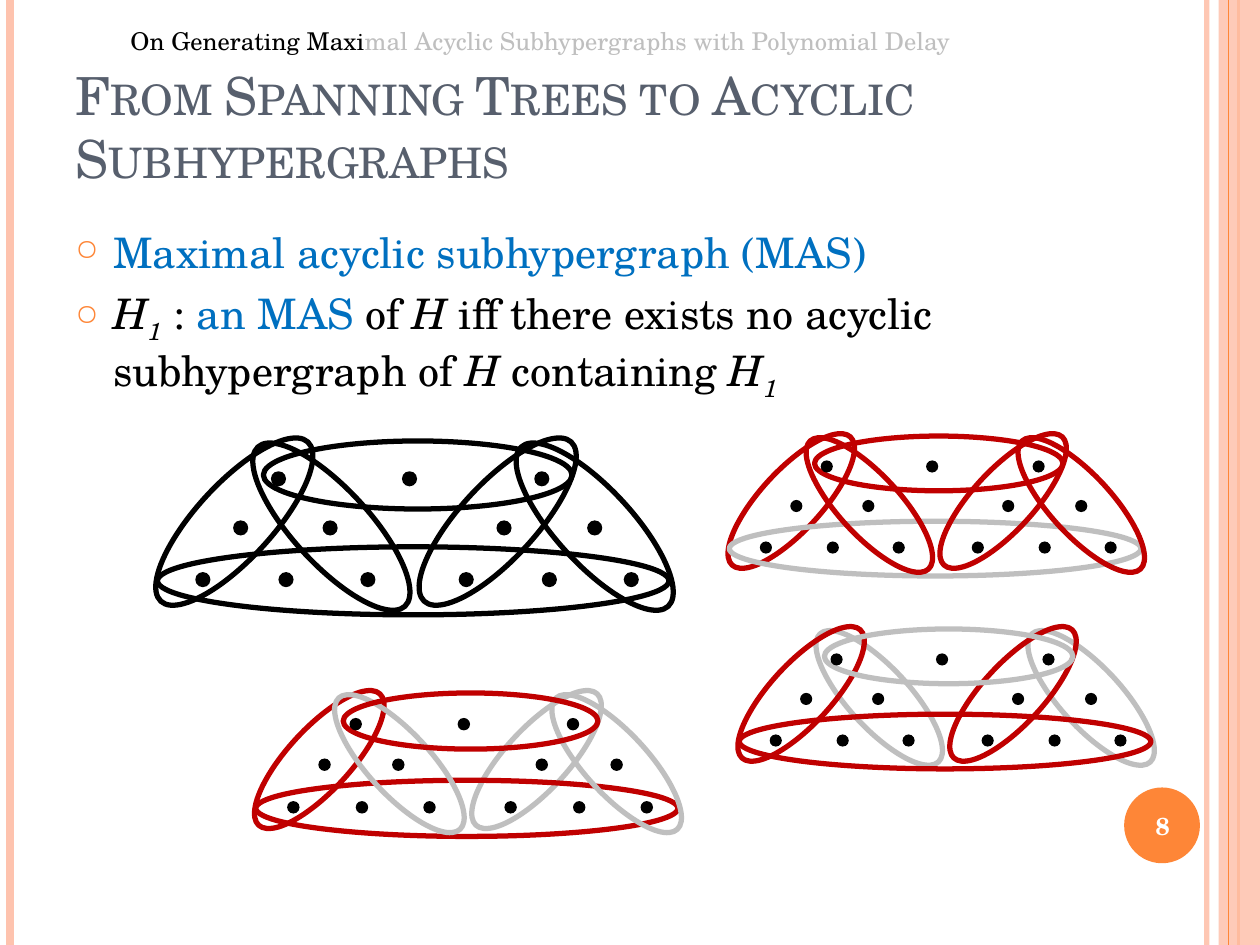
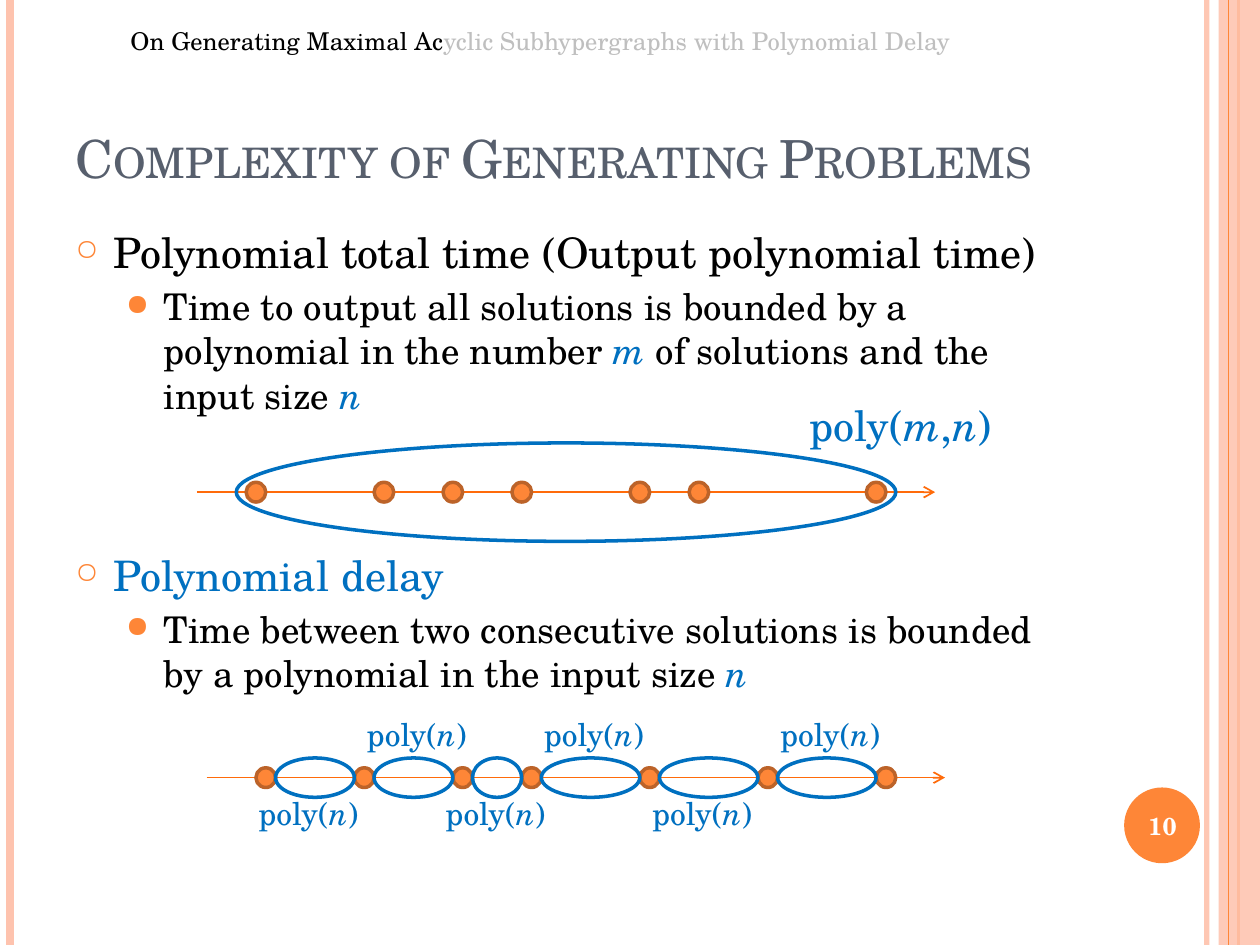
from itertools import accumulate, pairwise
from lxml import etree
from pptx import Presentation
from pptx.dml.color import RGBColor
from pptx.enum.shapes import MSO_CONNECTOR, MSO_SHAPE
from pptx.enum.text import MSO_ANCHOR, PP_ALIGN
from pptx.oxml.ns import qn
from pptx.util import Inches, Pt

OVAL, RECT = MSO_SHAPE.OVAL, MSO_SHAPE.RECTANGLE
LINE = MSO_CONNECTOR.STRAIGHT
TOP, MID, LOW = MSO_ANCHOR.TOP, MSO_ANCHOR.MIDDLE, MSO_ANCHOR.BOTTOM
MIDDLE = PP_ALIGN.CENTER
FONT = "TeX Gyre Schola"
HEX = {
    "black": "000000", "white": "FFFFFF", "grey": "BFBFBF", "slate": "575F6D",
    "blue": "0070C0", "red": "C00000", "peach": "FEC3AE", "orange": "FE8637",
    "rust": "BC6329", "arrow": "FF6B0A",
}
RGB = {name: RGBColor.from_string(code) for name, code in HEX.items()}

deck = Presentation()
deck.slide_width, deck.slide_height = Inches(10), Inches(7.5)
CELL = deck.slide_width / 128  # grid of 128 columns by 96 rows
COLS, ROWS = 128, 96


def draw(slide, kind, box, fill=None, line=None, width=0, alpha=100, turn=0):
    """Draw a shape or line in a box of grid cells: left, top, width, height."""
    x, y, w, h = [round(n * CELL) for n in box]
    if kind is LINE:
        item = slide.shapes.add_connector(kind, x, y, x + w, y + h)
        etree.SubElement(item._element.spPr, qn("a:effectLst"))
    else:
        item = slide.shapes.add_shape(kind, x, y, w, h)
        item.shadow.inherit = False
        item.rotation = turn
        if fill:
            item.fill.solid()
            item.fill.fore_color.rgb = RGB[fill]
        else:
            item.fill.background()
    if line:
        item.line.color.rgb = RGB[line]
        item.line.width = Pt(width)
    else:
        item.line.fill.background()
    if alpha < 100:
        tone = next(item._element.spPr.iter(qn("a:srgbClr")))
        etree.SubElement(tone, qn("a:alpha"), val=str(alpha * 1000))
    return item


def write(slide, box, paras, size, hue="black", anchor=TOP, wrap=True):
    """Add text; flags of a run: i italic, s subscript, c small caps, or a hue."""
    area = slide.shapes.add_textbox(*[round(n * CELL) for n in box])
    frame = area.text_frame
    frame.word_wrap, frame.vertical_anchor = wrap, anchor
    for k, runs in enumerate(paras):
        p = frame.add_paragraph() if k else frame.paragraphs[0]
        p.font.name, p.font.size = FONT, Pt(size)
        for words, *flags in runs:
            run = p.add_run()
            run.text = words
            tint = next((f for f in flags if f in RGB), hue)
            run.font.color.rgb = RGB[tint]
            if "i" in flags:
                run.font.italic = True
            if "s" in flags:
                run._r.get_or_add_rPr().set("baseline", "-25000")
            if "c" in flags:
                run._r.get_or_add_rPr().set("cap", "small")
    return frame


# Content: title, page, letters of the running head read so far, body
HEAD = "On Generating Maximal Acyclic Subhypergraphs with Polynomial Delay"
PAGES = [
    ("From Spanning Trees to Acyclic Subhypergraphs", 8, 18, [
        (0, 6, [("Maximal acyclic subhypergraph (MAS)", "blue")]),
        (0, 6, [("H", "i"), ("1", "i", "s"), (" : ",), ("an MAS ", "blue"),
                ("of ",), ("H ", "i"),
                ("iff there exists no acyclic subhypergraph of ",), ("H", "i"),
                (" containing ",), ("H", "i"), ("1", "i", "s")]),
    ]),
    ("Complexity of Generating Problems", 10, 24, [
        (0, 6, [("Polynomial total time (Output polynomial time)",)]),
        (1, 4, [("Time to output all solutions is bounded by a polynomial "
                 "in the number ",), ("m", "i", "blue"),
                (" of solutions and the input size ",), ("n", "i", "blue")]),
        (0, 76, [("Polynomial delay", "blue")]),
        (1, 4, [("Time between two consecutive solutions is bounded by a "
                 "polynomial in the input size ",), ("n", "i", "blue")]),
    ]),
]
# Text size, left margin, bullet, bullet size for each level
LEVELS = [(24, 0.3, "○", 70), (21, 0.7, "●", 80)]

# Shared frame, title and body
for title, page, done, body in PAGES:
    slide = deck.slides.add_slide(deck.slide_layouts[6])
    for x, tint, width, alpha in [(122.6, "peach", 3, 93), (1.05, "peach", 4.5, 100),
                                  (125.8, "orange", 1.5, 100)]:
        draw(slide, LINE, (x, 0, 0, ROWS), line=tint, width=width, alpha=alpha)
    draw(slide, RECT, (123.8, 0, COLS - 123.8, ROWS), "peach", alpha=87)
    draw(slide, LINE, (124.8, 0, 0, ROWS), line="orange", width=0.75)
    draw(slide, OVAL, (114.2, 80, 7.7, 7.7), "orange")
    badge = write(slide, (113.8, 80.2, 8.6, 7.3), [[(str(page),)]], 14, "white", MID)
    badge.paragraphs[0].alignment = MIDDLE
    badge.paragraphs[0].font.bold = True
    write(slide, (12, 2, 100, 4.4), [[(HEAD[:done],), (HEAD[done:], "grey")]], 14)
    write(slide, (6.4, 3.84, 104.6, 16), [[(title, "c")]], 30, "slate", LOW)

    text = write(slide, (6.4, 22.4, 104.6, 68.2), [runs for _, _, runs in body], 24)
    for p, (level, gap, _) in zip(text.paragraphs, body):
        size, left, mark, share = LEVELS[level]
        p.font.size, p.space_before = Pt(size), Pt(gap)
        props = p._p.get_or_add_pPr()
        props.set("marL", str(Inches(left)))
        props.set("indent", str(Inches(-0.3)))
        tone = etree.Element(qn("a:buClr"))
        etree.SubElement(tone, qn("a:srgbClr"), val=HEX["orange"])
        scale = etree.Element(qn("a:buSzPct"), val=str(share * 1000))
        sign = etree.Element(qn("a:buChar"), char=mark)
        for part in (tone, scale, sign):
            props.find(qn("a:defRPr")).addprevious(part)

trees, times = deck.slides

# Hypergraphs: edges a, c, d, e are the legs, t the top, b the base
EDGES = {
    "a": (-0.25, 0.34, 1.72, 0.6, 312.7), "b": (0, 0.84, 4.06, 0.54, 0),
    "c": (0.52, 0.38, 1.72, 0.6, 47.3), "d": (1.84, 0.34, 1.72, 0.6, 312.7),
    "e": (2.61, 0.38, 1.72, 0.6, 47.3), "t": (0.84, 0, 2.45, 0.54, 0),
}
NODES = {
    0.24: (0.9, 1.94, 2.99),
    0.63: (0.6, 1.31, 2.69, 3.41),
    1.04: (0.3, 0.96, 1.61, 2.39, 3.05, 3.7),
}
# Left, top, scale, drawing order, chosen edges, their hue
GRAPHS = [
    (74.1, 44.3, 10.3, "abcdet", "acdet", "red"),
    (16, 44.8, 12.8, "abcdet", "abcdet", "black"),
    (75.1, 63.9, 10.3, "ceabdt", "abd", "red"),
    (26, 70.4, 10.56, "adbcet", "abt", "red"),
]
for left, top, zoom, order, chosen, hue in GRAPHS:
    for key in order:
        x, y, w, h, turn = EDGES[key]
        draw(trees, OVAL, (left + x * zoom, top + y * zoom, w * zoom, h * zoom),
             line=hue if key in chosen else "grey", width=3, turn=turn)
    for y, row in NODES.items():
        for x in row:
            draw(trees, OVAL, (left + x * zoom, top + y * zoom, 0.12 * zoom, 0.12 * zoom),
                 "black")

# Timelines: start, row, steps from one solution to the next
SPANS = [(21, 79, (6, 10, 10, 7, 12, 12, 12)), (20, 50, (6, 13, 7, 7, 12, 6, 18))]
for start, row, steps in SPANS:
    axis = draw(times, LINE, (start, row, 75, 0), line="arrow", width=1)
    etree.SubElement(axis.get_or_add_ln(), qn("a:tailEnd"), type="arrow")
    for x in accumulate(steps, initial=start):
        if x > start:
            draw(times, OVAL, (x - 1, row - 1, 2, 2), "orange", "rust", 2)

# Total time: one loop round all solutions
draw(times, OVAL, (24, 45, 67, 10), line="blue", width=2)
write(times, (81, 40, 21.6, 6.5),
      [[("poly(",), ("m", "i"), (",",), ("n", "i"), (")",)]], 24, "blue", wrap=False)

# Delay: one loop and label for each gap, labels below and above in turn
start, row, steps = SPANS[0]
spots = list(accumulate(steps, initial=start))[1:]
for a, b in pairwise(spots):
    draw(times, OVAL, (a + 1, row - 2, b - a - 2, 4), line="blue", width=2)
for k, x in enumerate((25, 36, 44, 54, 65, 78)):
    write(times, (x, row - 7 if k % 2 else row + 1, 13, 5.1),
          [[("poly(",), ("n", "i"), (")",)]], 18, "blue", wrap=False)

deck.save("out.pptx")
